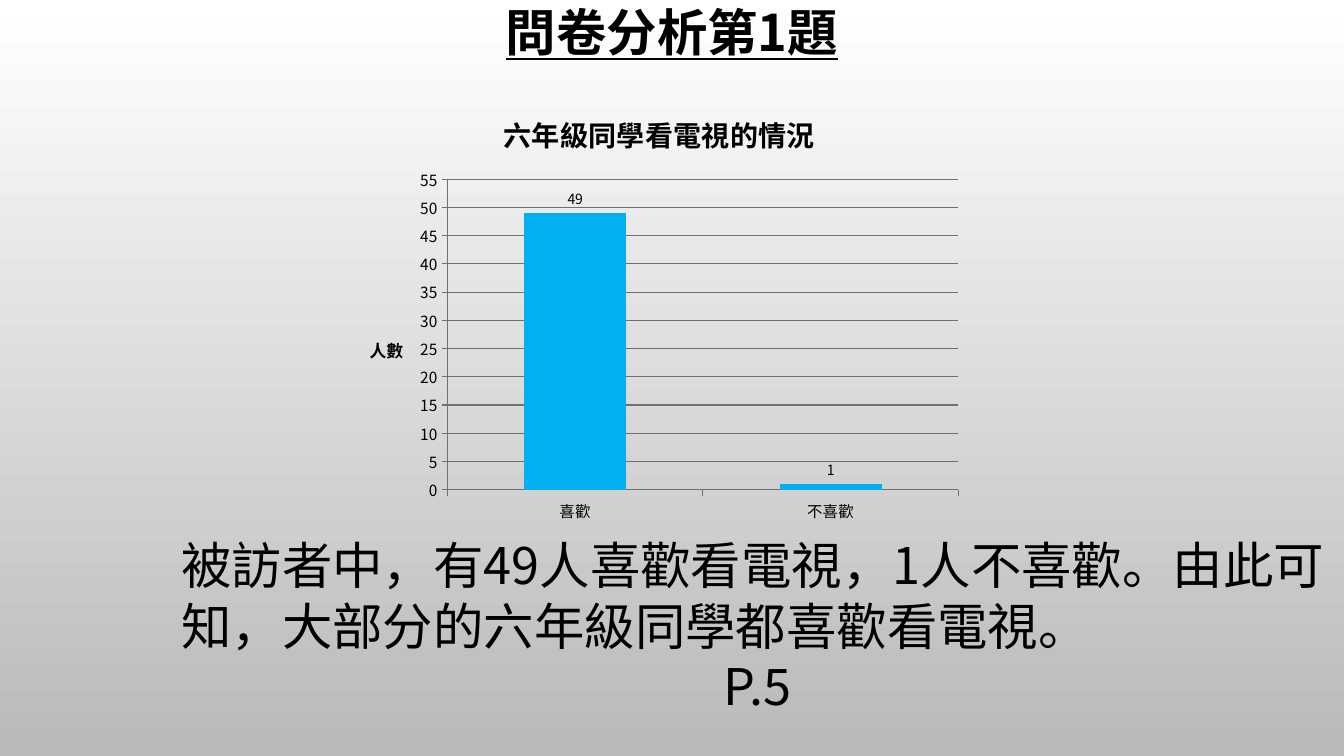
from lxml import etree
from pptx import Presentation
from pptx.chart.data import CategoryChartData
from pptx.dml.color import RGBColor
from pptx.enum.chart import XL_CHART_TYPE, XL_LABEL_POSITION, XL_TICK_MARK
from pptx.enum.text import MSO_ANCHOR, MSO_AUTO_SIZE, PP_ALIGN
from pptx.oxml.ns import qn
from pptx.util import Inches, Pt

COLUMN = XL_CHART_TYPE.COLUMN_CLUSTERED
OUTSIDE_END = XL_LABEL_POSITION.OUTSIDE_END
TICK_OUTSIDE = XL_TICK_MARK.OUTSIDE
MIDDLE = MSO_ANCHOR.MIDDLE
TOP = MSO_ANCHOR.TOP
NO_AUTOFIT = MSO_AUTO_SIZE.NONE
CENTER = PP_ALIGN.CENTER
LEFT = PP_ALIGN.LEFT

BLACK = RGBColor(0, 0, 0)
WHITE = RGBColor(255, 255, 255)
GREY = RGBColor(0xB9, 0xB9, 0xB9)
LINE_GREY = RGBColor(0x70, 0x70, 0x70)
BAR_BLUE = RGBColor(0, 0xB0, 0xF0)

FONT = "Noto Sans CJK SC"
LABEL_FONT = "Noto Sans CJK TC"
TITLE_ONLY = 5
WIDTH, HEIGHT = 13.33, 7.5

TITLE_BOX = (1, -0.21, 11.33, 1.12)
CHART_BOX = (3.45, 0.91, 6.18, 4.34)
FINDING_BOX = (1.7, 5.25, 11.63, 2.25)


def style_font(font, size, bold=False, name=FONT):
    """Set size, weight, colour and the Latin and East Asian typefaces."""
    font.size = Pt(size)
    font.bold = bold
    font.color.rgb = BLACK
    font.name = name
    etree.SubElement(font._rPr, qn("a:ea")).set("typeface", name)


def place(shape, box):
    """Move a shape to a box given in inches."""
    shape.left, shape.top, shape.width, shape.height = map(Inches, box)


def set_layout(parent, index, **shares):
    """Give a chart part a manual layout in shares of the chart's size."""
    for old in parent.findall(qn("c:layout")):
        parent.remove(old)
    layout = etree.Element(qn("c:layout"))
    manual = etree.SubElement(layout, qn("c:manualLayout"))
    if "w" in shares:
        etree.SubElement(manual, qn("c:layoutTarget")).set("val", "inner")
    for side in "xy":
        etree.SubElement(manual, qn(f"c:{side}Mode")).set("val", "edge")
    for side, share in shares.items():
        etree.SubElement(manual, qn(f"c:{side}")).set("val", str(share))
    parent.insert(index, layout)


def paint_background(slide):
    """Fill the slide with a gradient from white down to grey."""
    fill = slide.background.fill
    fill.gradient()
    fill.gradient_angle = 270
    for stop, color, position in zip(fill.gradient_stops, (WHITE, GREY), (0, 1)):
        stop.color.rgb = color
        stop.position = position


def add_title(slide, box):
    """Write the underlined heading in the title placeholder."""
    title = slide.shapes.title
    place(title, box)
    frame = title.text_frame
    frame.text = "問卷分析第1題"
    frame.vertical_anchor = MIDDLE
    frame.auto_size = NO_AUTOFIT
    paragraph = frame.paragraphs[0]
    paragraph.alignment = CENTER
    paragraph.line_spacing = 0.9
    font = paragraph.runs[0].font
    style_font(font, 36, bold=True)
    font.underline = True


def style_axis(axis):
    """Format the line, tick marks and labels of an axis."""
    axis.major_tick_mark = TICK_OUTSIDE
    axis.format.line.color.rgb = LINE_GREY
    style_font(axis.tick_labels.font, 11)


def add_heading(owner_title, text, size):
    """Write the title of a chart or an axis."""
    frame = owner_title.text_frame
    frame.text = text
    style_font(frame.paragraphs[0].runs[0].font, size, bold=True)
    return frame


def add_survey_chart(slide, box):
    """Draw the column chart of the answers."""
    data = CategoryChartData()
    data.categories = ["喜歡", "不喜歡"]
    data.add_series("Series 1", (49, 1))
    chart = slide.shapes.add_chart(COLUMN, *map(Inches, box), data).chart
    chart.has_legend = False
    style_font(chart.font, 10, name="Calibri")
    add_heading(chart.chart_title, "六年級同學看電視的情況", 20)
    chart.chart_title.include_in_layout = False

    plot = chart.plots[0]
    plot.gap_width = 150
    plot.vary_by_categories = False
    series = plot.series[0]
    series.format.fill.solid()
    series.format.fill.fore_color.rgb = BAR_BLUE
    labels = series.data_labels
    labels.show_value = True
    labels.position = OUTSIDE_END
    style_font(labels.font, 10, name=LABEL_FONT)

    style_axis(chart.category_axis)
    axis = chart.value_axis
    style_axis(axis)
    axis.minimum_scale, axis.maximum_scale, axis.major_unit = 0, 55, 5
    axis.has_major_gridlines = True
    axis.major_gridlines.format.line.color.rgb = LINE_GREY
    frame = add_heading(axis.axis_title, "人數", 12)
    body = frame._txBody.find(qn("a:bodyPr"))
    body.set("rot", "0")
    body.set("vert", "horz")
    set_layout(axis.axis_title._element, 1, x=0.03, y=0.55)
    plot_area = chart._chartSpace.find(".//" + qn("c:plotArea"))
    set_layout(plot_area, 0, x=0.16, y=0.2, w=0.82, h=0.71)


def add_finding(slide, box):
    """Write the conclusion and the page mark below the chart."""
    frame = slide.shapes.add_textbox(*map(Inches, box)).text_frame
    frame.word_wrap = True
    frame.vertical_anchor = TOP
    frame.text = (
        "被訪者中，有49人喜歡看電視，1人不喜歡。由此可知，大部分的六年級同學都喜歡看電視。\n"
        "P.5"
    )
    for paragraph, alignment in zip(frame.paragraphs, (LEFT, CENTER)):
        paragraph.alignment = alignment
        style_font(paragraph.runs[0].font, 36)


def main():
    """Build the slide and save it."""
    presentation = Presentation()
    presentation.slide_width = Inches(WIDTH)
    presentation.slide_height = Inches(HEIGHT)
    slide = presentation.slides.add_slide(presentation.slide_layouts[TITLE_ONLY])
    paint_background(slide)
    add_title(slide, TITLE_BOX)
    add_finding(slide, FINDING_BOX)
    add_survey_chart(slide, CHART_BOX)
    presentation.save("out.pptx")


if __name__ == "__main__":
    main()
